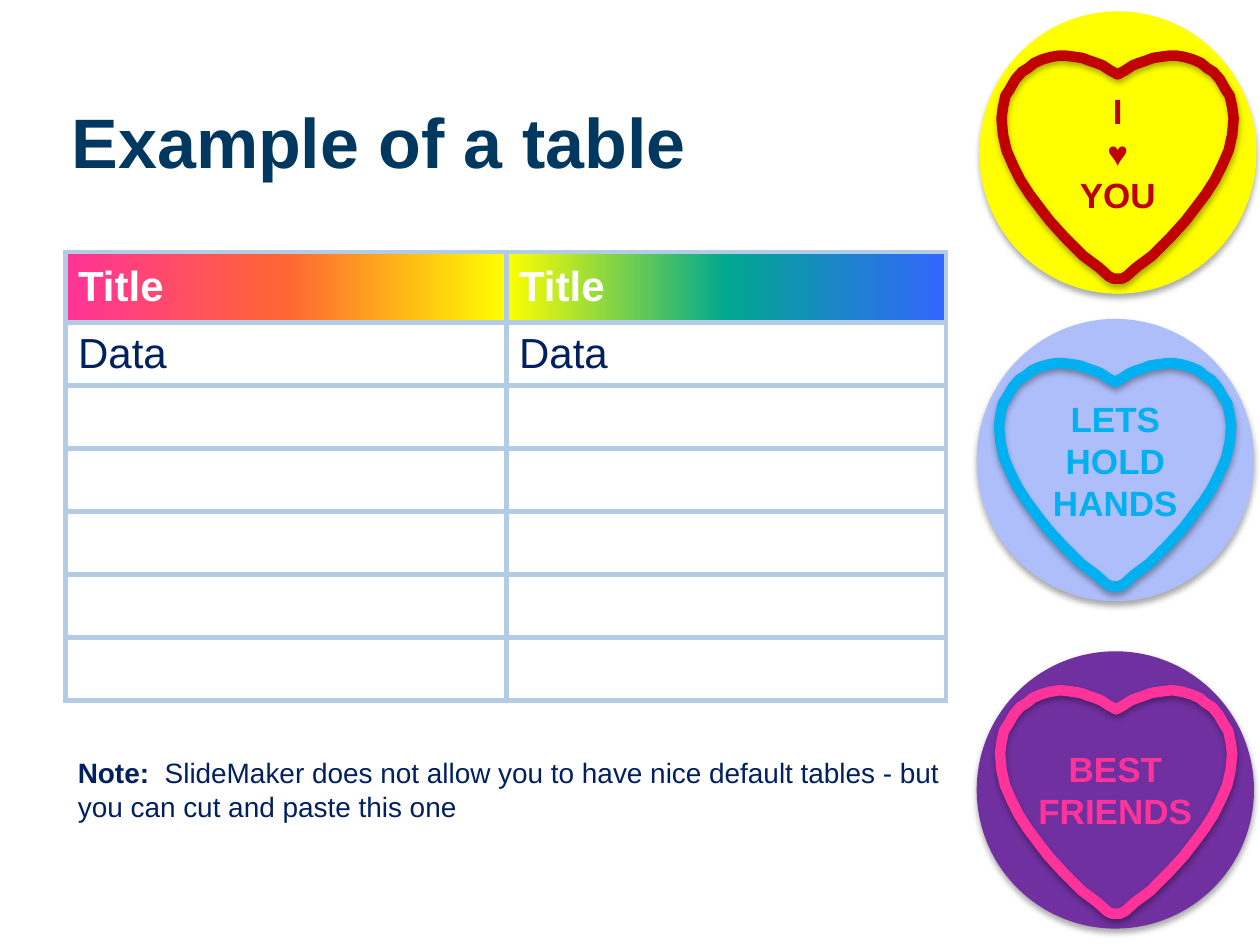
from dataclasses import dataclass

from pptx import Presentation
from pptx import util as u
from pptx.dml.color import RGBColor
from pptx.enum import shapes, text
from pptx.oxml import parse_xml
from pptx.oxml.ns import nsdecls, qn

NAVY = RGBColor(0x00, 0x38, 0x60)
INK = RGBColor(0x00, 0x20, 0x60)
WHITE = RGBColor(0xFF, 0xFF, 0xFF)
BORDER = RGBColor(0xB3, 0xCC, 0xE6)
YELLOW = RGBColor(0xFF, 0xFF, 0x00)
RED = RGBColor(0xC0, 0x00, 0x00)
LILAC = RGBColor(0xAE, 0xBE, 0xFA)
SKY = RGBColor(0x00, 0xB0, 0xF0)
PURPLE = RGBColor(0x70, 0x30, 0xA0)
PINK = RGBColor(0xFF, 0x33, 0x99)
ORANGE = RGBColor(0xFF, 0x66, 0x33)
TEAL = RGBColor(0x01, 0xA7, 0x8F)
BLUE = RGBColor(0x33, 0x66, 0xFF)

# Right half of the heart in cm, from the notch to the tip
HALF_HEART = [
    (0, 0.38), (0.15, 0.3), (0.3, 0.2), (0.43, 0.15), (0.58, 0.1),
    (0.71, 0.05), (0.84, 0.03), (1.07, 0), (1.17, 0), (1.35, 0.03),
    (1.52, 0.08), (1.68, 0.15), (1.8, 0.25), (1.93, 0.33), (2.06, 0.48),
    (2.18, 0.69), (2.26, 0.81), (2.31, 1.04), (2.34, 1.27), (2.31, 1.6),
    (2.24, 1.91), (2.11, 2.21), (1.96, 2.51), (1.78, 2.79), (1.57, 3.07),
    (1.37, 3.33), (1.07, 3.66), (0.69, 4.04), (0.38, 4.27), (0.18, 4.45),
    (0.08, 4.5), (0, 4.5),
]


@dataclass
class Sweet:
    left: float
    top: float
    height: float
    heart_x: float
    heart_top: float
    fill: RGBColor
    ink: RGBColor
    words: list[str]


SWEETS = [
    Sweet(19.74, 0.23, 5.69, 22.53, 1.12, YELLOW, RED, ["I", "♥", "YOU"]),
    Sweet(19.69, 6.43, 5.69, 22.48, 7.32, LILAC, SKY, ["LETS", "HOLD HANDS"]),
    Sweet(19.69, 13.13, 5.59, 22.5, 13.92, PURPLE, PINK, ["BEST", "FRIENDS"]),
]
HEADER_FILLS = [(PINK, ORANGE, YELLOW), (YELLOW, TEAL, BLUE)]
ROWS = [["Title", "Title"], ["Data", "Data"]] + [["", ""]] * 5


def add_run(p, words: str, size: float, color: RGBColor, bold: bool = False) -> None:
    r = p.add_run()
    r.text = words
    r.font.name = "Arial"
    r.font.size = u.Pt(size)
    r.font.bold = bold
    r.font.color.rgb = color


def add_shadow(sp) -> None:
    sp.shadow.inherit = False
    sp._element.spPr.find(qn("a:effectLst")).append(parse_xml(
        f'<a:outerShdw {nsdecls("a")} blurRad="{u.Pt(3.5)}" dist="{u.Pt(2.2)}" '
        'dir="5400000" rotWithShape="0"><a:srgbClr val="000000">'
        '<a:alpha val="32000"/></a:srgbClr></a:outerShdw>'))


def add_sweet(s, sweet: Sweet) -> None:
    # Disc with its words
    sp = s.shapes.add_shape(
        shapes.MSO_SHAPE.OVAL, u.Cm(sweet.left), u.Cm(sweet.top),
        u.Cm(5.59), u.Cm(sweet.height))
    sp.fill.solid()
    sp.fill.fore_color.rgb = sweet.fill
    sp.line.fill.background()
    add_shadow(sp)
    tf = sp.text_frame
    tf.word_wrap = True
    tf.vertical_anchor = text.MSO_ANCHOR.MIDDLE
    for i, words in enumerate(sweet.words):
        p = tf.add_paragraph() if i else tf.paragraphs[0]
        p.alignment = text.PP_ALIGN.CENTER
        add_run(p, words, 20, sweet.ink, bold=True)

    # Heart outline, mirrored about its centre line
    outline = HALF_HEART + [(-x, y) for x, y in HALF_HEART[-2:0:-1]]
    points = [(u.Cm(sweet.heart_x + x), u.Cm(sweet.heart_top + y)) for x, y in outline]
    builder = s.shapes.build_freeform(*points[0])
    builder.add_line_segments(points[1:], close=True)
    heart = builder.convert_to_shape()
    heart.fill.background()
    heart.line.color.rgb = sweet.ink
    heart.line.width = u.Pt(6)
    heart.line._get_or_add_ln().append(parse_xml(f'<a:round {nsdecls("a")}/>'))
    add_shadow(heart)


def add_borders(cell) -> None:
    tc_pr = cell._tc.get_or_add_tcPr()
    for side in ("lnL", "lnR", "lnT", "lnB"):
        tc_pr.append(parse_xml(
            f'<a:{side} {nsdecls("a")} w="{u.Pt(3)}"><a:solidFill>'
            f'<a:srgbClr val="{BORDER}"/></a:solidFill></a:{side}>'))


def fill_gradient(cell, colors: tuple[RGBColor, ...]) -> None:
    step = 100000 // (len(colors) - 1)
    stops = "".join(f'<a:gs pos="{i * step}"><a:srgbClr val="{c}"/></a:gs>'
                    for i, c in enumerate(colors))
    cell._tc.get_or_add_tcPr().append(parse_xml(
        f'<a:gradFill {nsdecls("a")}><a:gsLst>{stops}</a:gsLst>'
        '<a:lin ang="0" scaled="0"/></a:gradFill>'))


def add_data_table(s) -> None:
    table = s.shapes.add_table(
        len(ROWS), 2, u.Cm(1.32), u.Cm(5.08), u.Cm(17.75), u.Cm(9.04)).table
    table.horz_banding = False
    for column, width in zip(table.columns, (8.89, 8.86)):
        column.width = u.Cm(width)
    for i, row in enumerate(ROWS):
        header = i == 0
        table.rows[i].height = u.Cm(1.42 if header else 1.27)
        for j, words in enumerate(row):
            cell = table.cell(i, j)
            cell.vertical_anchor = text.MSO_ANCHOR.MIDDLE
            add_borders(cell)
            if header:
                fill_gradient(cell, HEADER_FILLS[j])
            else:
                cell.fill.background()
            if words:
                add_run(cell.text_frame.paragraphs[0], words, 24,
                        WHITE if header else INK, bold=header)


def add_title(s) -> None:
    sp = s.shapes.title
    sp.left, sp.top, sp.width, sp.height = map(u.Cm, (1.19, 1.24, 22.86, 3.18))
    sp.text_frame.vertical_anchor = text.MSO_ANCHOR.MIDDLE
    p = sp.text_frame.paragraphs[0]
    p.alignment = text.PP_ALIGN.LEFT
    add_run(p, "Example of a table", 40, NAVY, bold=True)


def add_note(s) -> None:
    tf = s.shapes.add_textbox(u.Cm(1.32), u.Cm(15.11), u.Cm(17.91), u.Cm(1.63)).text_frame
    tf.word_wrap = True
    p = tf.paragraphs[0]
    add_run(p, "Note:  ", 16, INK, bold=True)
    add_run(p, "SlideMaker does not allow you to have nice default tables - "
               "but you can cut and paste this one", 16, INK)


def main() -> None:
    prs = Presentation()
    prs.slide_width, prs.slide_height = u.Cm(25.4), u.Cm(19.05)
    s = prs.slides.add_slide(prs.slide_layouts[5])
    for sweet in SWEETS:
        add_sweet(s, sweet)
    add_title(s)
    add_data_table(s)
    add_note(s)
    prs.save("out.pptx")


if __name__ == "__main__":
    main()
